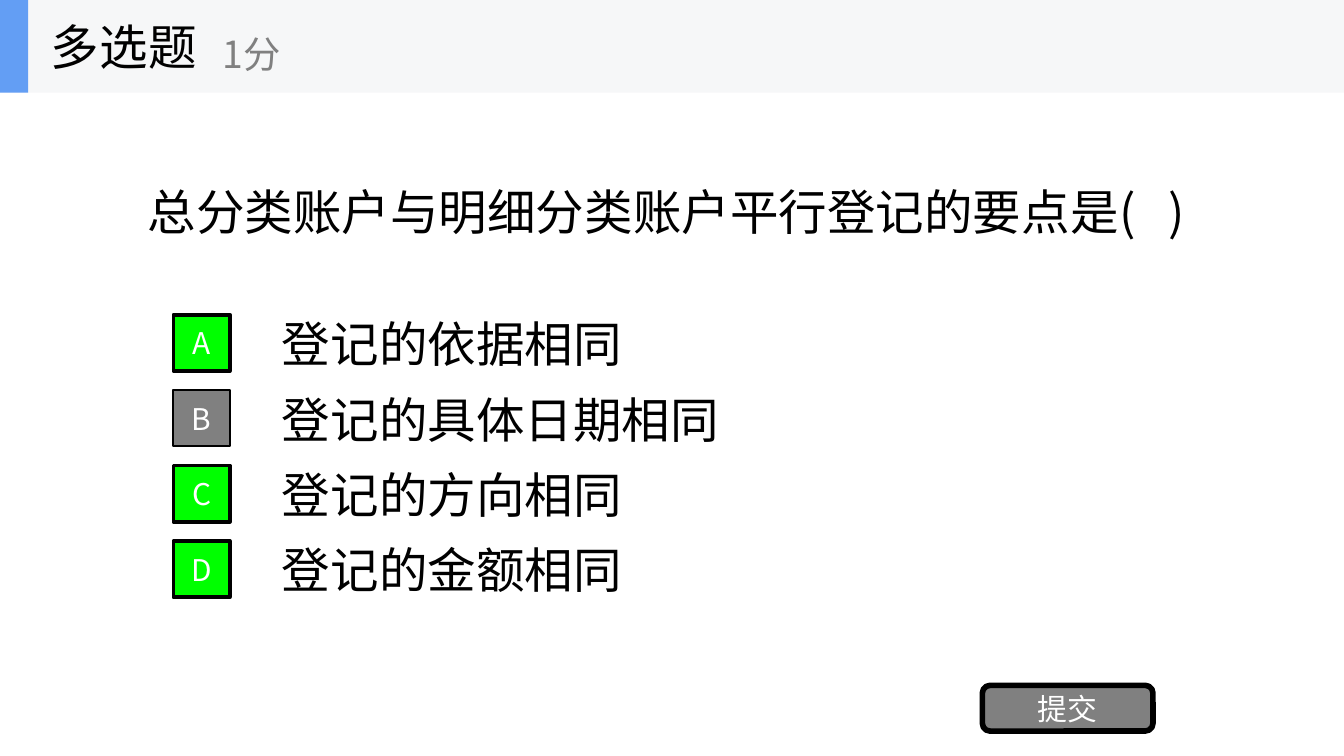
from lxml.etree import SubElement
from pptx import Presentation
from pptx.dml.color import RGBColor
from pptx.enum.shapes import MSO_SHAPE
from pptx.enum.text import MSO_ANCHOR, PP_ALIGN
from pptx.oxml.ns import qn
from pptx.util import Pt

BLACK = RGBColor(0x00, 0x00, 0x00)
WHITE = RGBColor(0xFF, 0xFF, 0xFF)
GRAY = RGBColor(0x80, 0x80, 0x80)
GREEN = RGBColor(0x00, 0xFF, 0x00)
BLUE = RGBColor(0x63, 0x9E, 0xF4)
PALE = RGBColor(0xF6, 0xF7, 0xF8)

OPTIONS = [
    ("A", "登记的依据相同", True),
    ("B", "登记的具体日期相同", False),
    ("C", "登记的方向相同", True),
    ("D", "登记的金额相同", True),
]
OPTION_TOP = 164.9
OPTION_PITCH = 40.4


class QuizSlide:
    """Draws the elements of a quiz question on one slide in a shared style."""

    font_name = "Noto Sans CJK SC"
    body_size = 26
    button_size = 16

    def __init__(self, presentation):
        self.slide = presentation.slides.add_slide(presentation.slide_layouts[6])

    def set_text(self, shape, text, size, color, alignment=PP_ALIGN.LEFT):
        frame = shape.text_frame
        frame.word_wrap = True
        frame.vertical_anchor = MSO_ANCHOR.MIDDLE
        paragraph = frame.paragraphs[0]
        paragraph.text = text
        paragraph.alignment = alignment
        font = paragraph.font
        font.size = Pt(size)
        font.name = self.font_name
        font.color.rgb = color
        properties = paragraph._p.pPr.find(qn("a:defRPr"))
        SubElement(properties, qn("a:ea"), typeface=self.font_name)

    def text(self, left, top, width, height, text, size=body_size, color=BLACK):
        box = self.slide.shapes.add_textbox(Pt(left), Pt(top), Pt(width), Pt(height))
        self.set_text(box, text, size, color)

    def panel(self, left, top, width, height, fill, kind=MSO_SHAPE.RECTANGLE):
        shape = self.slide.shapes.add_shape(
            kind, Pt(left), Pt(top), Pt(width), Pt(height))
        shape.shadow.inherit = False
        shape.fill.solid()
        shape.fill.fore_color.rgb = fill
        shape.line.fill.background()
        return shape

    def button(self, left, top, width, height, text, fill, line_width,
               kind=MSO_SHAPE.RECTANGLE):
        shape = self.panel(left, top, width, height, fill, kind)
        shape.line.color.rgb = BLACK
        shape.line.width = Pt(line_width)
        frame = shape.text_frame
        frame.margin_left = frame.margin_right = Pt(0)
        frame.margin_top = frame.margin_bottom = Pt(0)
        self.set_text(shape, text, self.button_size, WHITE, PP_ALIGN.CENTER)

    def option(self, top, letter, answer, correct):
        self.text(144, top, 504, 38, answer)
        fill, line_width = (GREEN, 2) if correct else (GRAY, 1)
        self.button(92.9, top + 3.7, 30.2, 30.2, letter, fill, line_width)


def main():
    presentation = Presentation()
    presentation.slide_width = Pt(720)
    presentation.slide_height = Pt(405)
    quiz = QuizSlide(presentation)

    quiz.text(72, 49.7, 576, 126.7, "总分类账户与明细分类账户平行登记的要点是(   )")
    for index, (letter, answer, correct) in enumerate(OPTIONS):
        quiz.option(OPTION_TOP + index * OPTION_PITCH, letter, answer, correct)
    quiz.button(526.3, 367.2, 91.4, 24.5, "提交", GRAY, 3,
                MSO_SHAPE.ROUNDED_RECTANGLE)

    quiz.panel(0, 0, 720, 49.7, PALE)
    quiz.panel(0, 0, 15.1, 49.7, BLUE)
    quiz.text(20.2, 0, 149.8, 49.7, "多选题")
    quiz.text(112.3, 8.6, 180, 40.3, "1分", 20, GRAY)

    presentation.save("out.pptx")


if __name__ == "__main__":
    main()
